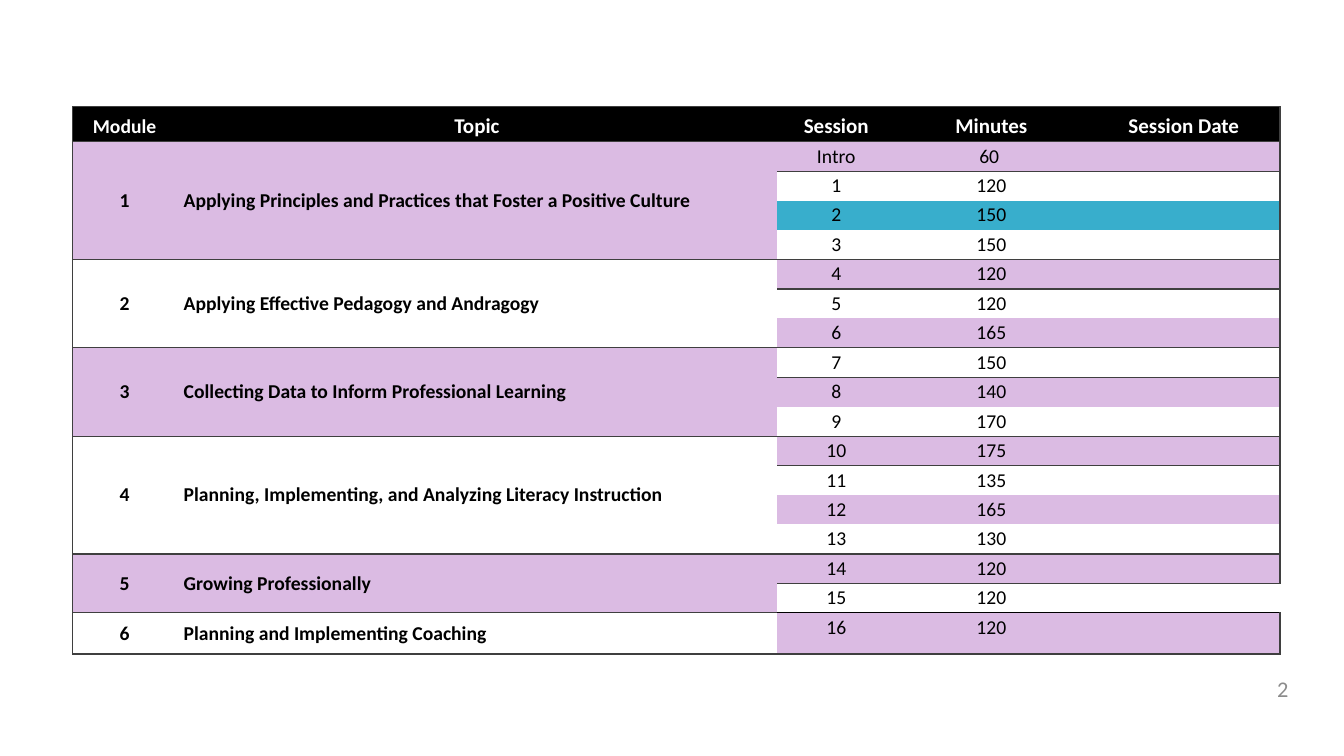
from lxml import etree
from pptx import Presentation
from pptx.dml.color import RGBColor
from pptx.enum.text import MSO_ANCHOR, PP_ALIGN
from pptx.oxml.ns import qn
from pptx.util import Cm, Pt

LEFT, MID, RIGHT = PP_ALIGN.LEFT, PP_ALIGN.CENTER, PP_ALIGN.RIGHT
TOP, CENTER, BOTTOM = MSO_ANCHOR.TOP, MSO_ANCHOR.MIDDLE, MSO_ANCHOR.BOTTOM
BLACK = RGBColor(0x00, 0x00, 0x00)
WHITE = RGBColor(0xFF, 0xFF, 0xFF)
LILAC = RGBColor(0xDB, 0xBB, 0xE3)
BLUE = RGBColor(0x38, 0xAE, 0xCC)
DARK = RGBColor(0x3F, 0x3F, 0x3F)
GRAY = RGBColor(0x8C, 0x8C, 0x8C)
PLAIN = "{2D5ABB26-0587-4C30-8999-92F81FD0307C}"

HEADS = ["Module", "Topic", "Session", "Minutes", "Session Date"]
WIDTHS = [2.62, 15.14, 2.97, 4.85, 4.85]
TOPICS = [
    ("Applying Principles and Practices that Foster a Positive Culture",
     ["60 ", "120", "150", "150"]),
    ("Applying Effective Pedagogy and Andragogy", ["120", "120", "165"]),
    ("Collecting Data to Inform Professional Learning", ["150", "140", "170"]),
    ("Planning, Implementing, and Analyzing Literacy Instruction",
     ["175", "135", "165", "130"]),
    ("Growing Professionally", ["120", "120"]),
    ("Planning and Implementing Coaching", ["120"]),
]


def write(frame, text, size=14, color=BLACK, bold=False, align=MID):
    para = frame.paragraphs[0]
    para.alignment = align
    if not text:
        para._p.get_or_add_endParaRPr().set("sz", str(size * 100))
        return
    run = para.add_run()
    run.text = text
    run.font.name = "Calibri"
    run.font.size = Pt(size)
    run.font.bold = bold
    run.font.color.rgb = color


def style(cell, fill, edges, anchor, side=0.15, rim=0.07):
    cell.margin_left = cell.margin_right = Cm(side)
    cell.margin_top = cell.margin_bottom = Cm(rim)
    cell.vertical_anchor = anchor
    props = cell._tc.get_or_add_tcPr()
    for edge in "LRTB":
        if edge in edges:
            line = etree.SubElement(props, qn("a:ln" + edge), w="12700")
            solid = etree.SubElement(line, qn("a:solidFill"))
            etree.SubElement(solid, qn("a:srgbClr"), val=str(edges[edge]))
    cell.fill.solid()
    cell.fill.fore_color.rgb = fill


deck = Presentation()
deck.slide_width, deck.slide_height = Cm(33.87), Cm(19.05)
slide = deck.slides.add_slide(deck.slide_layouts[6])

count = sum(len(times) for topic, times in TOPICS)
heights = [0.88] + [0.74] * (count - 1) + [1.04]
frame = slide.shapes.add_table(
    count + 1, len(HEADS), Cm(1.83), Cm(2.69), Cm(sum(WIDTHS)), Cm(sum(heights)))
table = frame.table
table.first_row = table.horz_banding = False
table._tbl.tblPr.find(qn("a:tableStyleId")).text = PLAIN
for column, width in zip(table.columns, WIDTHS):
    column.width = Cm(width)
for row, height in zip(table.rows, heights):
    row.height = Cm(height)

last = len(HEADS) - 1
for col, head in enumerate(HEADS):
    edges = {"T": DARK, "B": DARK}
    if col == 0:
        edges["L"] = DARK
    if col == last:
        edges["R"] = DARK
    cell = table.cell(0, col)
    style(cell, BLACK, edges, BOTTOM)
    write(cell.text_frame, head, size=15 if col else 14, color=WHITE, bold=True)

session = 0
for index, (topic, times) in enumerate(TOPICS):
    first = session + 1
    shade = WHITE if index % 2 else LILAC
    for step, time in enumerate(times):
        row = session + 1
        band = BLUE if session == 2 else WHITE if session % 2 else LILAC
        values = ["", "", str(session) if session else "Intro", time, ""]
        if step == 0:
            values[:2] = [str(index + 1), topic]
        for col, value in enumerate(values):
            wide = col < 2
            edges = {}
            if col == 0:
                edges["L"] = DARK
            if col == last and session != 15:
                edges["R"] = DARK
            if step == 0:
                edges["T"] = BLACK if session == 16 and not wide else DARK
            if step == len(times) - 1:
                edges["B"] = BLACK if session == 15 and not wide else DARK
            cell = table.cell(row, col)
            style(cell, shade if wide else band, edges, CENTER if wide else TOP,
                  side=0.18 if wide else 0.15, rim=0.07 if col else 0)
            write(cell.text_frame, value, bold=wide, align=LEFT if col == 1 else MID)
        session += 1
    if len(times) > 1:
        for col in range(2):
            table.cell(first, col).merge(table.cell(session, col))

box = slide.shapes.add_textbox(Cm(26.8), Cm(16.97), Cm(5.92), Cm(0.76))
box.text_frame.word_wrap = True
box.text_frame.vertical_anchor = CENTER
write(box.text_frame, "2", size=16, color=GRAY, align=RIGHT)

deck.save("out.pptx")
